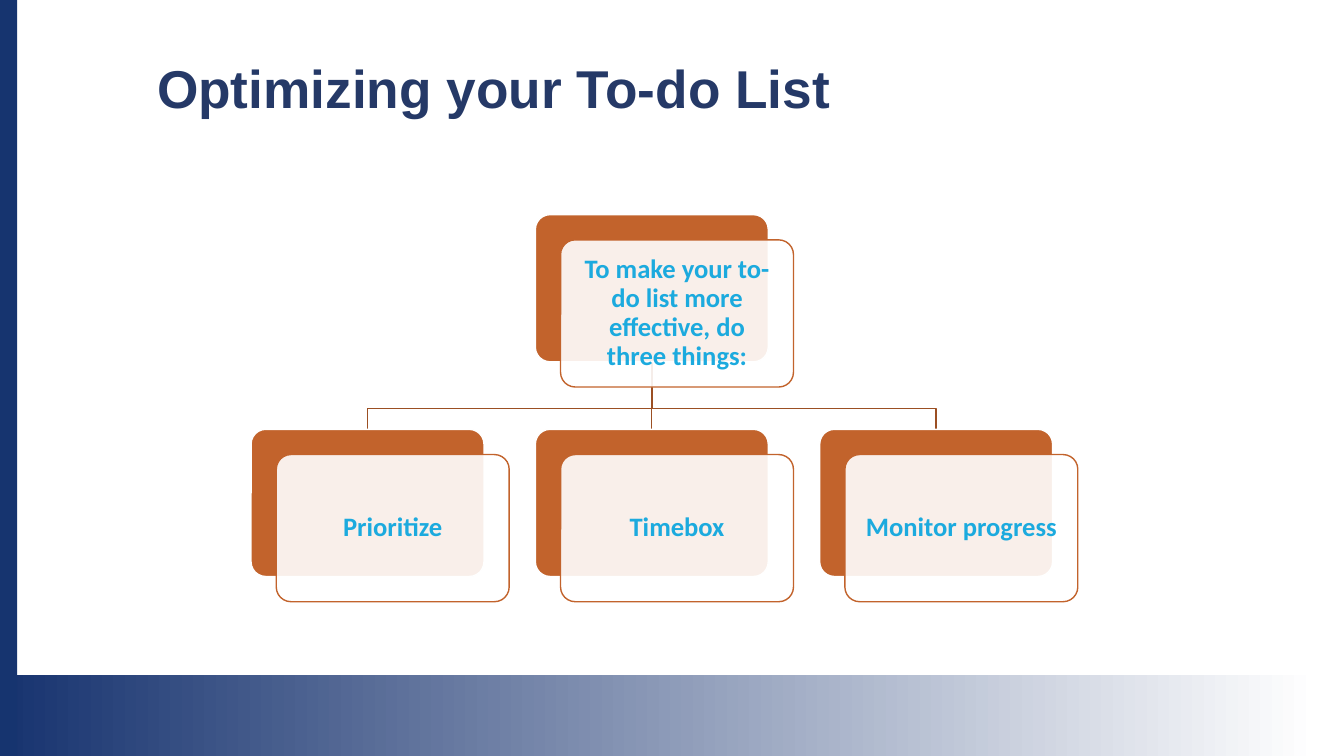
from dataclasses import dataclass

from lxml import etree
from pptx import Presentation
from pptx.dml.color import RGBColor
from pptx.enum.shapes import MSO_CONNECTOR, MSO_SHAPE
from pptx.enum.text import MSO_ANCHOR, PP_ALIGN
from pptx.oxml.ns import qn
from pptx.util import Inches, Pt

RECT, ROUNDED = MSO_SHAPE.RECTANGLE, MSO_SHAPE.ROUNDED_RECTANGLE
STRAIGHT = MSO_CONNECTOR.STRAIGHT
TOP, MIDDLE = MSO_ANCHOR.TOP, MSO_ANCHOR.MIDDLE
LEFT, CENTER = PP_ALIGN.LEFT, PP_ALIGN.CENTER

SLIDE_W, SLIDE_H = 13.33, 7.5
CARD_W, CARD_H = 2.31, 1.46
CARD_SHIFT = 0.25
COLUMN_STEP, ROW_STEP = 2.82, 2.13
BRANCH_DROP = 0.46

ROOT = "To make your to-do list more effective, do three things:"
STEPS = ["Prioritize", "Timebox", "Monitor progress"]


@dataclass(frozen=True)
class Theme:
    white: RGBColor = RGBColor.from_string("FFFFFF")
    footer: RGBColor = RGBColor.from_string("17336F")
    side: RGBColor = RGBColor.from_string("16346F")
    title: RGBColor = RGBColor.from_string("253967")
    card: RGBColor = RGBColor.from_string("C2632C")
    branch: RGBColor = RGBColor.from_string("9B4F23")
    label: RGBColor = RGBColor.from_string("1CAADE")
    title_font: str = "Arial"
    label_font: str = "Calibri"
    title_size: Pt = Pt(38)
    label_size: Pt = Pt(19)
    line_width: Pt = Pt(1)
    front_alpha: int = 90


THEME = Theme()


def add_block(slide, kind, box, fill, line=None):
    block = slide.shapes.add_shape(kind, *map(Inches, box))
    block.shadow.inherit = False
    block.fill.solid()
    block.fill.fore_color.rgb = fill
    if line is None:
        block.line.fill.background()
    else:
        style_line(block, line)
    return block


def style_line(shape, color):
    shape.line.color.rgb = color
    shape.line.width = THEME.line_width


def write_text(shape, text, inset, anchor, align, font):
    frame = shape.text_frame
    sides = dict.fromkeys(("left", "top", "right", "bottom"), inset)
    sides.update(inset if isinstance(inset, dict) else {})
    margins = {f"margin_{side}": Inches(gap) for side, gap in sides.items()}
    for name, value in {"word_wrap": True, "vertical_anchor": anchor, **margins}.items():
        setattr(frame, name, value)
    paragraph = frame.paragraphs[0]
    paragraph.text = text
    paragraph.alignment = align
    paragraph.line_spacing = 0.9
    run_font = paragraph.runs[0].font
    run_font.color.rgb = font["color"]
    for name in ("name", "size", "bold"):
        setattr(run_font, name, font[name])


def draw_frame(slide):
    """Draw the fading footer band and the bar along the left edge."""
    footer = add_block(slide, RECT, (0, 6.7, SLIDE_W, 0.8), THEME.footer)
    footer.fill.gradient()
    footer.fill.gradient_angle = 0
    fade = [(0, THEME.footer), (0.98, THEME.white)]
    for stop, (position, color) in zip(footer.fill.gradient_stops, fade):
        stop.position = position
        stop.color.rgb = color
    add_block(slide, RECT, (0, 0, 0.17, SLIDE_H), THEME.side)


def draw_title(slide, box, text):
    title = slide.shapes.add_textbox(*map(Inches, box))
    insets = {"left": 0.1, "top": 0.05, "right": 0.1, "bottom": 0.05}
    font = {"name": THEME.title_font, "size": THEME.title_size,
            "bold": True, "color": THEME.title}
    write_text(title, text, insets, TOP, LEFT, font)


def draw_card(slide, left, top, text):
    """Draw a solid card with a translucent labelled card shifted over it."""
    back = add_block(slide, ROUNDED, (left, top, CARD_W, CARD_H), THEME.card, THEME.white)
    front = add_block(slide, ROUNDED,
                      (left + CARD_SHIFT, top + CARD_SHIFT, CARD_W, CARD_H),
                      THEME.white, THEME.card)
    for card in (back, front):
        card.adjustments[0] = 0.1
    color = front.fill._xPr.find(qn("a:solidFill"))[0]
    etree.SubElement(color, qn("a:alpha"), val=str(THEME.front_alpha * 1000))
    font = {"name": THEME.label_font, "size": THEME.label_size,
            "bold": True, "color": THEME.label}
    write_text(front, text, 0.12, MIDDLE, CENTER, font)


def draw_branch(slide, start, end):
    (x1, y1), (x2, y2) = start, end
    if x1 == x2:
        branch = slide.shapes.add_connector(STRAIGHT, *map(Inches, (x1, y1, x2, y2)))
        etree.SubElement(branch._element.spPr, qn("a:effectLst"))
    else:
        bend = y1 + BRANCH_DROP
        builder = slide.shapes.build_freeform(Inches(x1), Inches(y1))
        corners = [(x1, bend), (x2, bend), (x2, y2)]
        builder.add_line_segments([(Inches(x), Inches(y)) for x, y in corners], close=False)
        branch = builder.convert_to_shape()
        branch.fill.background()
        branch.shadow.inherit = False
    style_line(branch, THEME.branch)


def draw_hierarchy(slide, left, top, root, steps):
    """Draw the root card centred above one row of step cards."""
    columns = [left + i * COLUMN_STEP for i in range(len(steps))]
    root_left = (columns[0] + columns[-1]) / 2
    row_top = top + ROW_STEP
    middle = CARD_W / 2
    for column in reversed(columns):
        draw_branch(slide, (root_left + middle, top + CARD_H), (column + middle, row_top))
    draw_card(slide, root_left, top, root)
    for column, step in zip(columns, steps):
        draw_card(slide, column, row_top, step)


def main():
    deck = Presentation()
    deck.slide_width, deck.slide_height = Inches(SLIDE_W), Inches(SLIDE_H)
    slide = deck.slides.add_slide(deck.slide_layouts[6])
    draw_frame(slide)
    draw_title(slide, (1.46, 0.57, 9.02, 0.96), "Optimizing your To-do List")
    draw_hierarchy(slide, 2.49, 2.13, ROOT, STEPS)
    deck.save("out.pptx")


if __name__ == "__main__":
    main()
